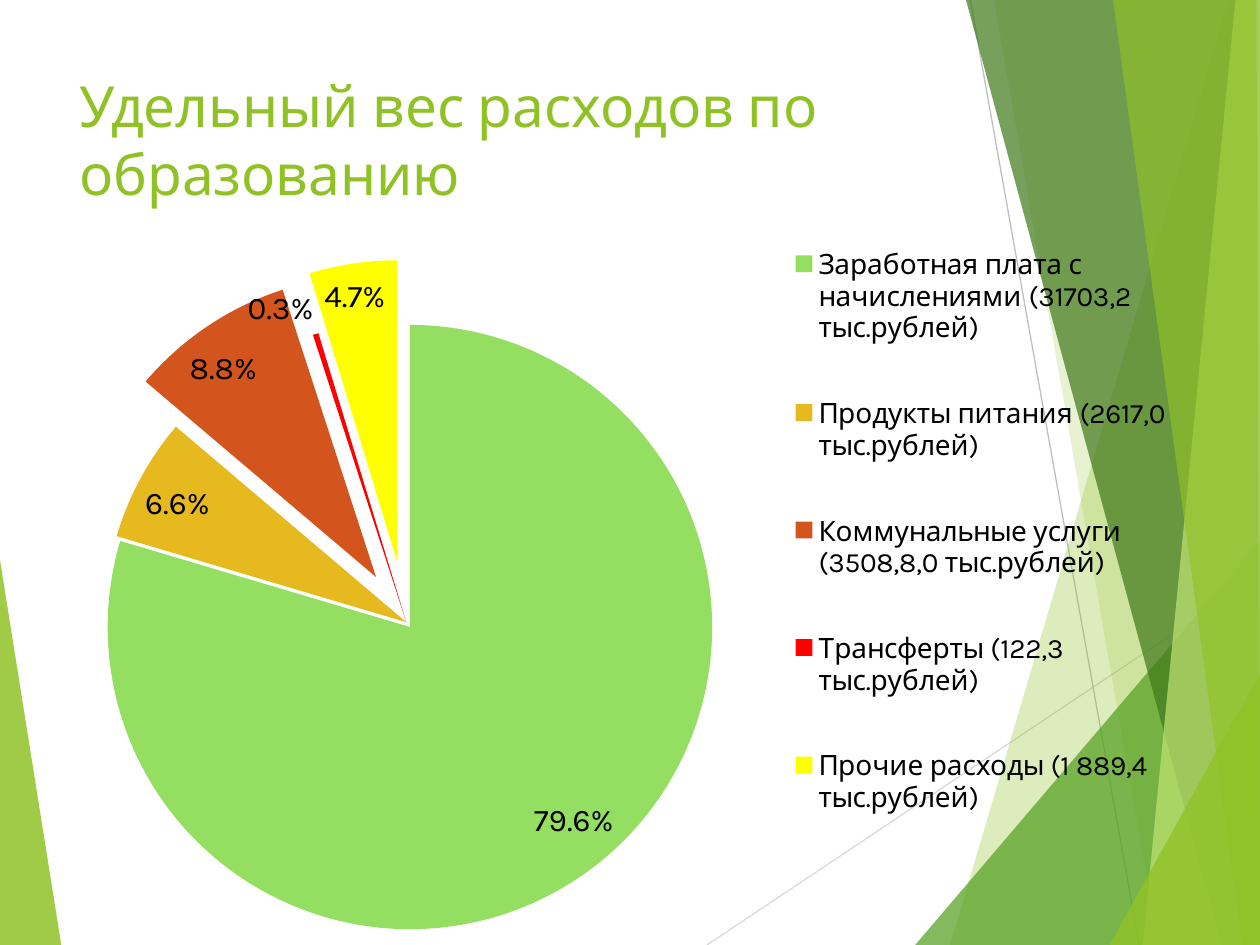
from dataclasses import dataclass

from lxml import etree
from pptx import Presentation
from pptx.chart.data import CategoryChartData
from pptx.dml.color import RGBColor
from pptx.enum import chart as ch, shapes, text
from pptx.oxml.ns import qn
from pptx.util import Pt


@dataclass(frozen=True)
class Theme:
    font: str = "Karla"
    accent: str = "90C226"
    green: str = "54A021"
    dark: str = "3F7819"
    light: str = "C0E474"
    ink: str = "000000"
    title_size: float = 32.4
    label_size: float = 18
    legend_size: float = 16


T = Theme()
W, H = 720, 540
CHART_W, CHART_H = 647, 448

LINES = [
    ((404, H), (W, 329), "D9D9D9"),
    ((554.5, 0), (651, H), "BFBFBF"),
]
FACETS = [
    ([(0, 320), (35.3, H), (0, H)], T.accent, 85),
    ([(702, 0), (543, H), (W, H), (W, 0)], T.accent, 30),
    ([(567.5, 0), (661.5, H), (W, H), (W, 0)], T.accent, 20),
    ([(522.7, H), (W, 309), (W, H)], T.green, 72),
    ([(552.3, 0), (698.5, H), (W, H), (W, 0)], T.dark, 70),
    ([(706.5, 0), (653, H), (W, H), (W, 0)], T.light, 70),
    ([(636, 0), (710, H), (W, H), (718.5, 0)], T.accent, 65),
    ([(634.5, H), (W, 385), (W, H)], T.accent, 80),
]
EXPENSES = [
    ("Заработная плата с начислениями (31703,2 тыс.рублей)", 0.796, "94DE61", 2),
    ("Продукты питания (2617,0 тыс.рублей)", 0.066, "E6B91E", 0),
    ("Коммунальные услуги (3508,8,0 тыс.рублей)", 0.088, "D3551D", 18),
    ("Трансферты (122,3 тыс.рублей)", 0.003, "FF0000", 0),
    ("Прочие расходы (1 889,4 тыс.рублей)", 0.047, "FFFF00", 20),
]


def rgb(color):
    return RGBColor.from_string(color)


def style_font(font, size, color):
    font.name = T.font
    font.size = Pt(size)
    font.bold = False
    font.color.rgb = rgb(color)


def add_facet(slide, points, color, opacity):
    builder = slide.shapes.build_freeform(*points[0], scale=Pt(1))
    builder.add_line_segments(points[1:], close=True)
    sp = builder.convert_to_shape()
    sp.shadow.inherit = False
    sp.fill.solid()
    sp.fill.fore_color.rgb = rgb(color)
    sp.line.fill.background()
    clr = sp._element.spPr.find(qn("a:solidFill"))[0]
    etree.SubElement(clr, qn("a:alpha"), val=str(opacity * 1000))


def add_line(slide, start, end, color):
    line = slide.shapes.add_connector(
        shapes.MSO_CONNECTOR.STRAIGHT, *map(Pt, start + end))
    line.line.color.rgb = rgb(color)
    line.line.width = Pt(0.75)
    etree.SubElement(line._element.spPr, qn("a:effectLst"))


def add_title(slide, title):
    sp = slide.shapes.title
    sp.left, sp.top, sp.width, sp.height = map(Pt, (38, 36, 556, 87))
    tf = sp.text_frame
    tf.text = title
    tf.word_wrap = True
    tf.vertical_anchor = text.MSO_ANCHOR.MIDDLE
    p = tf.paragraphs[0]
    p.alignment = text.PP_ALIGN.LEFT
    p.line_spacing = 1.0
    style_font(p.runs[0].font, T.title_size, T.accent)


def set_layout(parent, successor, left, top, width, height, inner=False):
    for old in parent.findall(qn("c:layout")):
        parent.remove(old)
    layout = etree.Element(qn("c:layout"))
    manual = etree.SubElement(layout, qn("c:manualLayout"))
    if inner:
        etree.SubElement(manual, qn("c:layoutTarget"), val="inner")
    for mode in ("xMode", "yMode"):
        etree.SubElement(manual, qn(f"c:{mode}"), val="edge")
    box = {"x": left / CHART_W, "y": top / CHART_H,
           "w": width / CHART_W, "h": height / CHART_H}
    for key, share in box.items():
        etree.SubElement(manual, qn(f"c:{key}"), val=f"{share:.4f}")
    parent.find(qn(successor)).addprevious(layout)


def add_pie(slide, expenses):
    data = CategoryChartData(number_format="0.0%")
    data.categories = [name for name, *_ in expenses]
    data.add_series("Series 1", [share for _, share, *_ in expenses])
    chart = slide.shapes.add_chart(
        ch.XL_CHART_TYPE.PIE, *map(Pt, (31, 83, CHART_W, CHART_H)), data).chart
    chart.has_title = False
    style_font(chart.font, T.label_size, T.ink)

    plot = chart.plots[0]
    plot.vary_by_categories = True
    series = plot.series[0]
    for i, (_, _, color, explosion) in enumerate(expenses):
        point = series.points[i]
        point.format.fill.solid()
        point.format.fill.fore_color.rgb = rgb(color)
        point.format.line.fill.background()
        if explosion:
            sp_pr = point.format.fill._xPr
            sp_pr.addprevious(
                etree.Element(qn("c:explosion"), val=str(explosion)))

    labels = series.data_labels
    labels.show_value = True
    labels.show_percentage = False
    labels.number_format = "0.0%"
    labels.number_format_is_linked = False
    labels.position = ch.XL_LABEL_POSITION.BEST_FIT
    style_font(labels.font, T.label_size, T.ink)

    chart.has_legend = True
    legend = chart.legend
    legend.position = ch.XL_LEGEND_POSITION.RIGHT
    legend.include_in_layout = False
    style_font(legend.font, T.legend_size, T.ink)
    set_layout(legend._element, "c:overlay", 419.4, 28.6, 220, 385)
    set_layout(chart._chartSpace.chart.plotArea, "c:pieChart",
               28.5, 100, 345.5, 345.5, inner=True)


def main():
    prs = Presentation()
    prs.slide_width, prs.slide_height = Pt(W), Pt(H)
    slide = prs.slides.add_slide(prs.slide_layouts[5])
    for line in LINES:
        add_line(slide, *line)
    for facet in FACETS:
        add_facet(slide, *facet)
    add_title(slide, "Удельный вес расходов по образованию")
    add_pie(slide, EXPENSES)
    prs.save("out.pptx")


if __name__ == "__main__":
    main()
